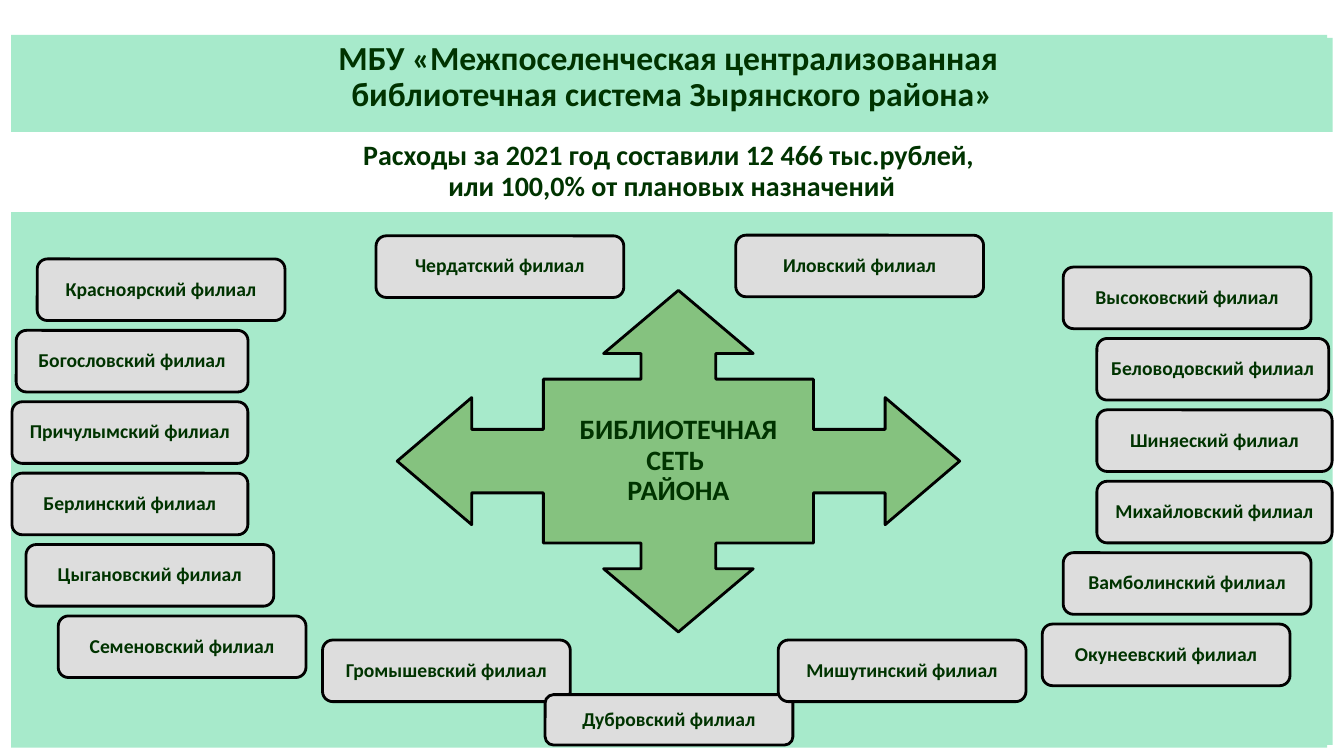
from collections import namedtuple

from lxml import etree
from pptx import Presentation
from pptx.dml.color import RGBColor
from pptx.enum.shapes import MSO_SHAPE
from pptx.enum.text import MSO_ANCHOR, MSO_AUTO_SIZE, PP_ALIGN
from pptx.oxml.ns import qn
from pptx.util import Pt

RECTANGLE = MSO_SHAPE.RECTANGLE
ROUNDED = MSO_SHAPE.ROUNDED_RECTANGLE
TOP = MSO_ANCHOR.TOP
MIDDLE = MSO_ANCHOR.MIDDLE
CENTER = PP_ALIGN.CENTER
NO_AUTOFIT = MSO_AUTO_SIZE.NONE

MINT = "A7EACB"
GREEN = "85C27F"
GREY = "DDDDDD"
DARK_GREEN = "003300"
BLACK = "000000"
WHITE = "FFFFFF"

SLIDE_WIDTH, SLIDE_HEIGHT = 960, 540
BRANCH_HEIGHT = 44
BRANCH_PITCH = 51
PARAGRAPH_FORMAT = {"alignment": CENTER, "line_spacing": 0.9,
                    "space_before": Pt(0), "space_after": Pt(0)}

Box = namedtuple("Box", "left top width height")

LEFT_BRANCHES = [
    ("Красноярский филиал", 18, 177),
    ("Богословский филиал", 3, 165.6),
    ("Причулымский филиал", 0, 168.5),
    ("Берлинский филиал", 0, 168.5),
    ("Цыгановский филиал", 10, 177),
    ("Семеновский филиал", 33, 177),
]
RIGHT_BRANCHES = [
    ("Высоковский филиал", 15, 177),
    ("Беловодовский филиал", 39, 165.6),
    ("Шиняеский филиал", 39, 168),
    ("Михайловский филиал", 39, 168),
    ("Вамболинский филиал", 15, 177),
    ("Окунеевский филиал", 0, 177),
]
TOP_BRANCHES = [
    ("Чердатский филиал", 0, 0.5, 44),
    ("Иловский филиал", 257, 0, 44),
]
BOTTOM_BRANCHES = [
    ("Громышевский филиал", 0, 0, 44),
    ("Дубровский филиал", 159, 39, 36),
    ("Мишутинский филиал", 325.5, 0, 44),
]


def color(value):
    return RGBColor.from_string(value)


def paint(shape, fill, line=None, weight=2):
    shape.shadow.inherit = False
    shape.fill.solid()
    shape.fill.fore_color.rgb = color(fill)
    if line:
        shape.line.color.rgb = color(line)
        shape.line.width = Pt(weight)
    else:
        shape.line.fill.background()


def write(shape, lines, size, anchor=MIDDLE, side_margin=7.2):
    frame = shape.text_frame
    frame_format = {"word_wrap": True, "auto_size": NO_AUTOFIT, "vertical_anchor": anchor,
                    "margin_left": Pt(side_margin), "margin_right": Pt(side_margin),
                    "margin_top": Pt(3.6), "margin_bottom": Pt(3.6)}
    for name, value in frame_format.items():
        setattr(frame, name, value)
    frame.text = "\n".join(lines)
    for paragraph in frame.paragraphs:
        for name, value in PARAGRAPH_FORMAT.items():
            setattr(paragraph, name, value)
        for run in paragraph.runs:
            for name, value in {"name": "Calibri", "size": Pt(size), "bold": True}.items():
                setattr(run.font, name, value)
            run.font.color.rgb = color(DARK_GREEN)


def place(shape, box):
    for name, value in box._asdict().items():
        setattr(shape, name, Pt(value))


def add_box(slide, preset, box):
    return slide.shapes.add_shape(preset, *map(Pt, box))


def add_panel(slide, box):
    for left, top, width, height in ((4, 2, 940, 505), (0, 0, 940, 509)):
        layer = Box(box.left + left, box.top + top, width, height)
        paint(add_box(slide, RECTANGLE, layer), MINT)


def add_branch(slide, name, box):
    branch = add_box(slide, ROUNDED, box)
    paint(branch, GREY, BLACK)
    write(branch, [name], 14)


def add_branch_column(slide, branches, box):
    for row, (name, shift, width) in enumerate(branches):
        add_branch(slide, name, Box(box.left + shift, box.top + row * BRANCH_PITCH,
                                    width, BRANCH_HEIGHT))


def add_branch_row(slide, branches, box):
    for name, shift, drop, height in branches:
        add_branch(slide, name, Box(box.left + shift, box.top + drop, 177, height))


def add_network_arrow(slide, box):
    center_x = box.left + box.width / 2
    center_y = box.top + box.height / 2
    reach_x, reach_y = box.width / 2, box.height / 2
    neck_x, neck_y = 0.735 * reach_x, 0.63 * reach_y
    core_x, core_y = 0.48 * reach_x, 0.48 * reach_y
    shaft_x, shaft_y = 0.133 * reach_x, 0.186 * reach_y
    quarter = [(reach_x, 0), (neck_x, 2 * shaft_y), (neck_x, shaft_y), (core_x, shaft_y),
               (core_x, core_y), (shaft_x, core_y), (shaft_x, neck_y),
               (2 * shaft_x, neck_y), (0, reach_y)]
    upper = [(-x, -y) for x, y in quarter] + [(x, -y) for x, y in quarter[-2::-1]]
    outline = upper + [(x, -y) for x, y in upper[-2:0:-1]]
    points = [(Pt(center_x + x), Pt(center_y + y)) for x, y in outline]
    builder = slide.shapes.build_freeform(*points[0])
    builder.add_line_segments(points[1:], close=True)
    arrow = builder.convert_to_shape()
    paint(arrow, GREEN, BLACK)
    write(arrow, ["БИБЛИОТЕЧНАЯ СЕТЬ ", "РАЙОНА"], 20, side_margin=reach_x - core_x + 7.2)


def bring_to_front(slide, shape):
    slide.shapes.element.append(shape.element)


def fill_expenses(slide, box):
    expenses = slide.placeholders[1]
    place(expenses, box)
    expenses.fill.solid()
    expenses.fill.fore_color.rgb = color(WHITE)
    expenses.line.color.rgb = color(WHITE)
    expenses.line.width = Pt(0.75)
    write(expenses, ["Расходы за 2021 год составили 12 466 тыс.рублей, ",
                     "или 100,0% от плановых назначений"], 20)
    for paragraph in expenses.text_frame.paragraphs:
        properties = paragraph._p.get_or_add_pPr()
        properties.set("marL", "0")
        properties.set("indent", "0")
        etree.SubElement(properties, qn("a:buNone"))
    bring_to_front(slide, expenses)


def fill_title(slide, box):
    title = slide.shapes.title
    place(title, box)
    write(title, ["МБУ «Межпоселенческая централизованная ",
                  "библиотечная система Зырянского района»"], 24, anchor=TOP)
    bring_to_front(slide, title)


def main():
    presentation = Presentation()
    presentation.slide_width = Pt(SLIDE_WIDTH)
    presentation.slide_height = Pt(SLIDE_HEIGHT)
    slide = presentation.slides.add_slide(presentation.slide_layouts[1])
    add_panel(slide, Box(8, 25, 944, 509))
    add_network_arrow(slide, Box(283.7, 207.4, 401.8, 244))
    add_branch_column(slide, LEFT_BRANCHES, Box(8.6, 185, 210, 299))
    add_branch_column(slide, RIGHT_BRANCHES, Box(744.5, 190.8, 207, 299))
    add_branch_row(slide, TOP_BRANCHES, Box(268.6, 168, 434, 44.5))
    add_branch_row(slide, BOTTOM_BRANCHES, Box(230.4, 457.2, 502.5, 75))
    fill_expenses(slide, Box(0, 94.3, SLIDE_WIDTH, 56.9))
    fill_title(slide, Box(0, 26, SLIDE_WIDTH, 60))
    presentation.save("out.pptx")


if __name__ == "__main__":
    main()
